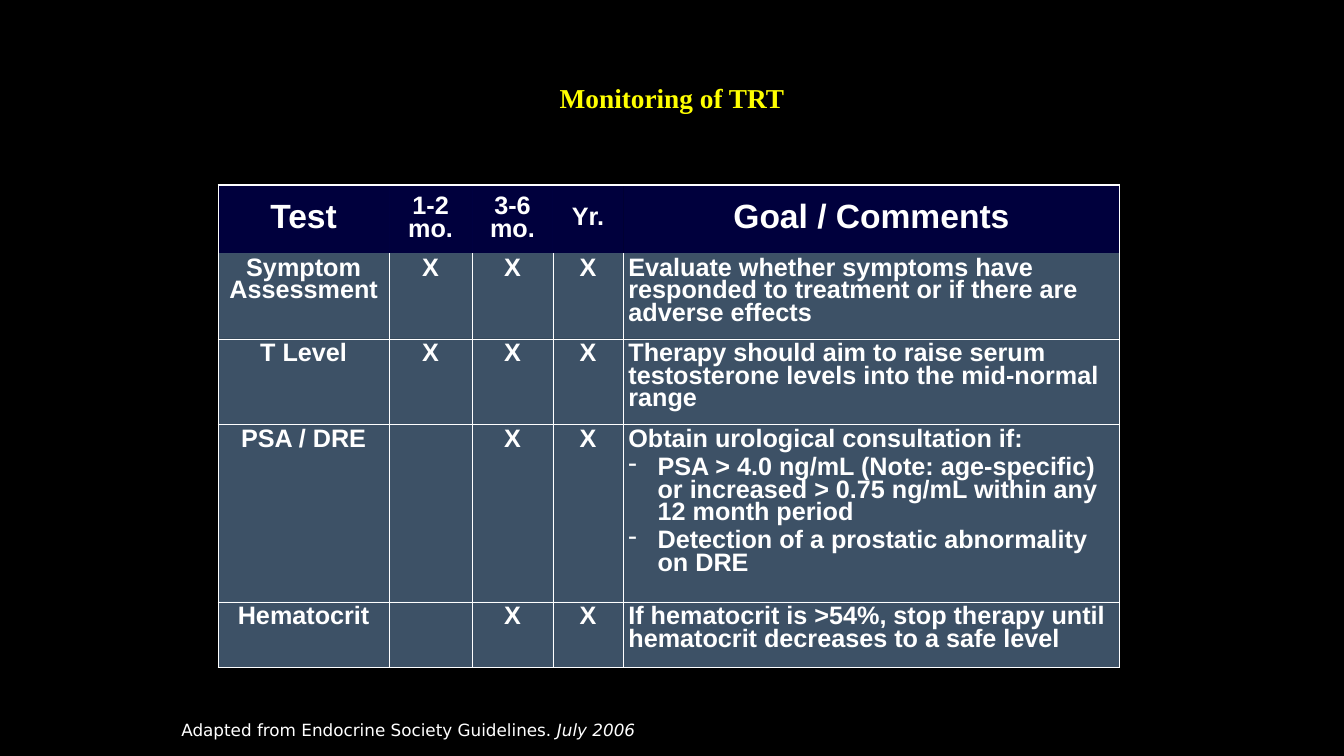
from pptx import Presentation
from pptx.dml.color import RGBColor
from pptx.enum import text
from pptx.oxml import ns, xmlchemy as xml
from pptx.util import Inches, Pt

INK = {
    "back": "000000",
    "title": "FFFF00",
    "text": "FFFFFF",
    "line": "FFFFFF",
    "head": "000066",
    "body": "99CCFF",
}
LEFT, MID = text.PP_ALIGN.LEFT, text.PP_ALIGN.CENTER
TOP, HALF = text.MSO_ANCHOR.TOP, text.MSO_ANCHOR.MIDDLE


def write(frame, paras, size=36, font="Arial", ink="text", bold=True,
          align=MID, space=0.8, before=8):
    """Fill a frame; a paragraph is a list of (words, italic, bulleted)."""
    for n, runs in enumerate(paras):
        para = frame.add_paragraph() if n else frame.paragraphs[0]
        para.alignment, para.line_spacing = align, space
        if n:
            para.space_before = Pt(before)
        if runs[0][2]:
            props = para._p.get_or_add_pPr()
            props.set("marL", str(Inches(0.58)))
            props.set("indent", str(-Inches(0.58)))
            mark = xml.OxmlElement("a:buChar")
            mark.set("char", "-")
            props.append(mark)
        for words, slant, _ in runs:
            run = para.add_run()
            run.text = words
            run.font.name, run.font.size = font, Pt(size)
            run.font.bold, run.font.italic = bold, slant
            run.font.color.rgb = RGBColor.from_string(INK[ink])


def dress(cell, ink, alpha, edges):
    """Give a cell its border widths in points (0 is none) and a clear fill."""
    props = cell._tc.get_or_add_tcPr()
    for side, width in edges.items():
        line = xml.OxmlElement(f"a:ln{side}")
        line.set("w", str(Pt(width)))
        if width:
            fill = xml.OxmlElement("a:solidFill")
            tint = xml.OxmlElement("a:srgbClr")
            tint.set("val", INK["line"])
            fill.append(tint)
            line.append(fill)
        else:
            line.append(xml.OxmlElement("a:noFill"))
        props.append(line)
    cell.fill.solid()
    cell.fill.fore_color.rgb = RGBColor.from_string(INK[ink])
    clear = xml.OxmlElement("a:alpha")
    clear.set("val", str(alpha * 1000))
    props.find(".//" + ns.qn("a:solidFill") + "[last()]")
    props.findall(ns.qn("a:solidFill"))[0][0].append(clear)


deck = Presentation()
deck.slide_width, deck.slide_height = Inches(26.67), Inches(15)
slide = deck.slides.add_slide(deck.slide_layouts[6])
slide.background.fill.solid()
slide.background.fill.fore_color.rgb = RGBColor.from_string(INK["back"])

# Title and source line
texts = [
    ((0.67, 1.31, 25.33, 1.38), HALF, [("Monitoring of TRT", False, False)],
     dict(size=39, font="Times New Roman", ink="title")),
    ((3.5, 14.17, 12.65, 0.61), TOP,
     [("Adapted from Endocrine Society Guidelines. ", False, False),
      ("July 2006", True, False)],
     dict(size=24, font="DejaVu Sans", bold=False, align=LEFT, space=1.0)),
]
for place, anchor, runs, form in texts:
    frame = slide.shapes.add_textbox(*map(Inches, place)).text_frame
    frame.word_wrap, frame.vertical_anchor = True, anchor
    frame.margin_left = frame.margin_right = Inches(0.1)
    frame.margin_top = frame.margin_bottom = Inches(0.1)
    write(frame, [runs], **form)

# Monitoring table; a leading "- " marks a bulleted paragraph
rows = [
    ["Test", "1-2 mo.", "3-6 mo.", "Yr.", "Goal / Comments"],
    ["Symptom Assessment", "X", "X", "X",
     "Evaluate whether symptoms have responded to treatment or if there are "
     "adverse effects"],
    ["T Level", "X", "X", "X",
     "Therapy should aim to raise serum testosterone levels into the "
     "mid-normal range"],
    ["PSA / DRE", "", "X", "X",
     "Obtain urological consultation if:\n"
     "- PSA > 4.0 ng/mL (Note: age-specific) or increased > 0.75 ng/mL "
     "within any 12 month period\n"
     "- Detection of a prostatic abnormality on DRE"],
    ["Hematocrit", "", "X", "X",
     "If hematocrit is >54%, stop therapy until hematocrit decreases to a "
     "safe level"],
]
wide = [3.39, 1.65, 1.6, 1.4, 9.85]
high = [1.35, 1.7, 1.7, 3.52, 1.31]
THICK, THIN = 2.25, 0.5

table = slide.shapes.add_table(
    len(rows), len(wide), Inches(4.33), Inches(3.67),
    Inches(sum(wide)), Inches(sum(high))).table
table.first_row = table.horz_banding = False
for col, width in zip(table.columns, wide):
    col.width = Inches(width)
for row, height in zip(table.rows, high):
    row.height = Inches(height)

for r, row in enumerate(rows):
    for c, words in enumerate(row):
        cell = table.cell(r, c)
        head, last = r == 0, c == len(wide) - 1
        cell.margin_left = cell.margin_right = Inches(0.1)
        cell.margin_top = cell.margin_bottom = Inches(0.1)
        cell.vertical_anchor = HALF if head else TOP
        inner = 0 if head else THIN
        dress(cell, "head" if head else "body", 60 if head else 40, {
            "L": THICK if c == 0 else inner,
            "R": THICK if last else inner,
            "T": THICK if head else 0 if r == 1 else THIN,
            "B": THICK if r == len(rows) - 1 else inner,
        })
        if words:
            paras = [[(part.removeprefix("- "), False, part.startswith("- "))]
                     for part in words.split("\n")]
            write(cell.text_frame, paras,
                  size=48 if head and c in (0, 4) else 36,
                  align=LEFT if last and not head else MID)

deck.save("out.pptx")
